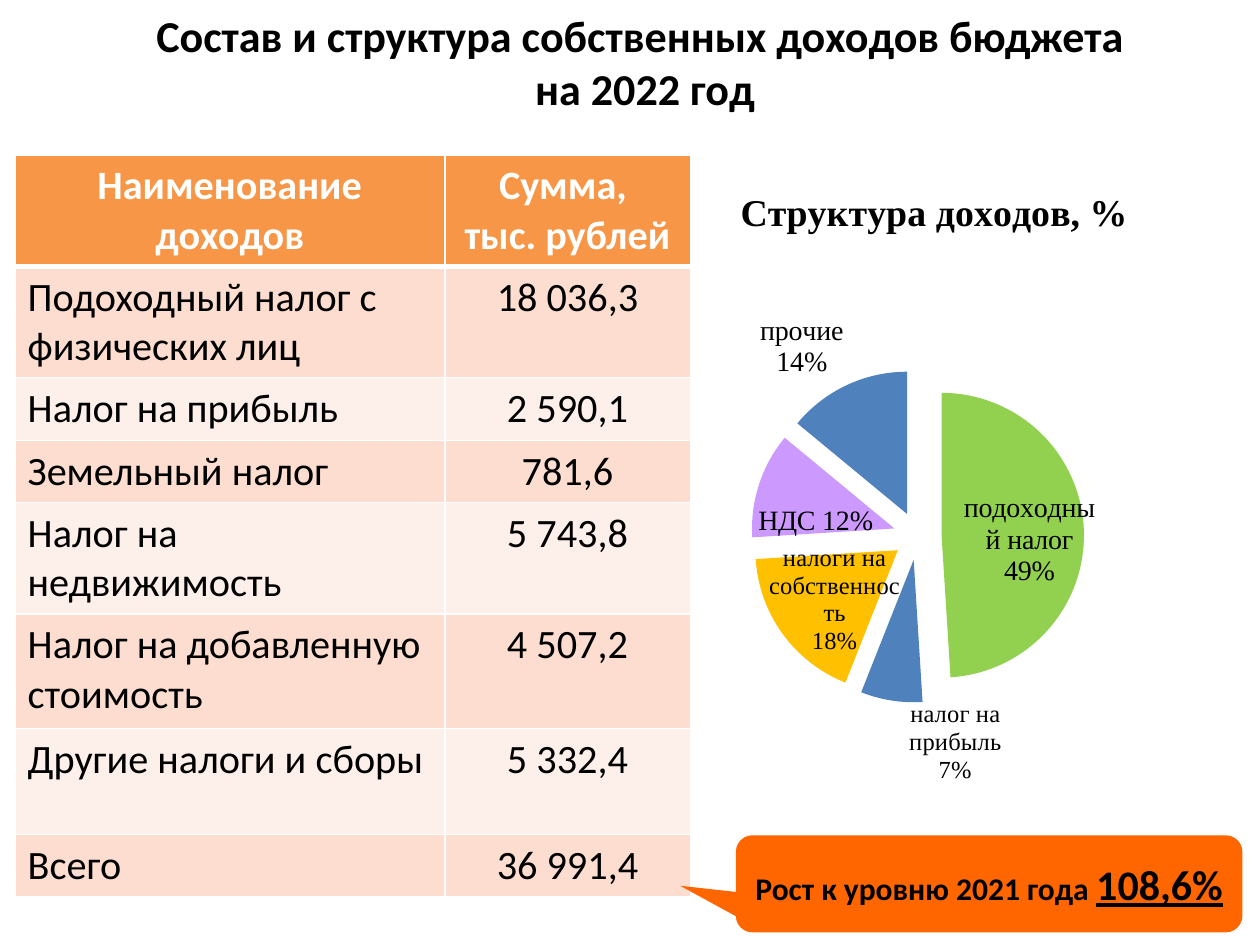
from pptx import Presentation, oxml
from pptx import util as u
from pptx.chart.data import CategoryChartData
from pptx.dml.color import RGBColor
from pptx.enum import chart as charts
from pptx.enum import shapes, text
from pptx.oxml.ns import nsdecls, qn

COLORS = {
    "black": "000000", "white": "FFFFFF", "header": "F79646",
    "odd": "FCDDCF", "even": "FDEFE9", "callout": "FF6600",
    "green": "92D050", "blue": "4F81BD", "yellow": "FFC000", "violet": "CC99FF",
}
ROWS = [
    ("Наименование доходов", "Сумма, \nтыс. рублей"),
    ("Подоходный налог с физических лиц", "18 036,3"),
    ("Налог на прибыль", "2 590,1"),
    ("Земельный налог", "781,6"),
    ("Налог на недвижимость", "5 743,8"),
    ("Налог на добавленную стоимость", "4 507,2"),
    ("Другие налоги и сборы", "5 332,4"),
    ("Всего", "36 991,4"),
]
INSIDE = charts.XL_LABEL_POSITION.CENTER
OUTSIDE = charts.XL_LABEL_POSITION.OUTSIDE_END
# name, percent, colour, label size, label place, label shift, separator
SLICES = [
    ("подоходный налог", 49, "green", 16, INSIDE, (0.03, 0.01), "\n"),
    ("налог на прибыль", 7, "blue", 14, OUTSIDE, (0.2, -0.01), "\n"),
    ("налоги на собственность", 18, "yellow", 14, INSIDE, (-0.01, 0.01), "\n"),
    ("НДС", 12, "violet", 16, INSIDE, (-0.02, 0.02), " "),
    ("прочие", 14, "blue", 16, OUTSIDE, (0, 0), "\n"),
]


def rgb(name):
    return RGBColor.from_string(COLORS[name])


def style_font(font, size, color="black", bold=False, name="Calibri", underline=None):
    font.size, font.bold, font.name, font.underline = u.Pt(size), bold, name, underline
    font.color.rgb = rgb(color)


def write(para, words, align=None, **style):
    """Add words to a paragraph; a newline becomes a line break."""
    para.alignment = align
    for number, line in enumerate(words.split("\n")):
        if number:
            para.add_line_break()
        span = para.add_run()
        span.text = line
        style_font(span.font, **style)


def place_part(parent, index, **shares):
    """Give a chart part a manual layout in shares of the chart."""
    old = parent.find(qn("c:layout"))
    if old is not None:
        parent.remove(old)
    inner = '<c:layoutTarget val="inner"/>' if "w" in shares else ""
    modes = "" if parent.tag == qn("c:dLbl") else '<c:xMode val="edge"/><c:yMode val="edge"/>'
    values = "".join(f'<c:{key} val="{value}"/>' for key, value in shares.items())
    parent.insert(index, oxml.parse_xml(
        f'<c:layout {nsdecls("c")}><c:manualLayout>{inner}{modes}{values}'
        "</c:manualLayout></c:layout>"))


class Slide:
    """A title-only page on a grid of 100 columns and 75 rows."""

    def __init__(self, deck):
        self.page = deck.slides.add_slide(deck.slide_layouts[5])
        self.column = deck.slide_width / 100
        self.row = deck.slide_height / 75

    def area(self, left, top, width, height):
        return (u.Emu(round(left * self.column)), u.Emu(round(top * self.row)),
                u.Emu(round(width * self.column)), u.Emu(round(height * self.row)))

    def title(self, words, *place):
        box = self.page.shapes.title
        box.left, box.top, box.width, box.height = self.area(*place)
        frame = box.text_frame
        frame.auto_size = text.MSO_AUTO_SIZE.NONE
        frame.vertical_anchor = text.MSO_ANCHOR.MIDDLE
        write(frame.paragraphs[0], words, text.PP_ALIGN.CENTER, size=25.2, bold=True)

    def table(self, rows, place, widths, heights):
        table = self.page.shapes.add_table(len(rows), len(widths), *self.area(*place)).table
        for column, width in zip(table.columns, widths):
            column.width = u.Emu(round(width * self.column))
        for number, (row, height) in enumerate(zip(table.rows, heights)):
            row.height = u.Emu(round(height * self.row))
            for cell, words in zip(row.cells, rows[number]):
                self.cell(cell, words, number, centred=number == 0 or words == rows[number][1])

    def cell(self, cell, words, number, centred):
        header = number == 0
        cell.fill.solid()
        cell.fill.fore_color.rgb = rgb("header" if header else "odd" if number % 2 else "even")
        for index, line in enumerate(words.split("\n")):
            frame = cell.text_frame
            para = frame.add_paragraph() if index else frame.paragraphs[0]
            write(para, line, text.PP_ALIGN.CENTER if centred else text.PP_ALIGN.LEFT,
                  size=23, bold=header, color="white" if header else "black")
        # White borders, thicker around the header's lower edge
        properties = cell._tc.get_or_add_tcPr()
        for index, side in enumerate("LRTB"):
            thick = (header and side == "B") or (number == 1 and side == "T")
            properties.insert(index, oxml.parse_xml(
                f'<a:ln{side} {nsdecls("a")} w="{u.Pt(3 if thick else 1)}"><a:solidFill>'
                f'<a:srgbClr val="{COLORS["white"]}"/></a:solidFill></a:ln{side}>'))

    def pie(self, title, slices, *place):
        data = CategoryChartData()
        data.categories = [item[0] for item in slices]
        data.add_series("Структура доходов", [item[1] for item in slices])
        chart = self.page.shapes.add_chart(
            charts.XL_CHART_TYPE.PIE, *self.area(*place), data).chart
        style_font(chart.font, 18)
        chart.has_legend = False
        chart.has_title = True
        write(chart.chart_title.text_frame.paragraphs[0], title,
              size=21.6, bold=True, name="Times New Roman")
        root = chart.element
        place_part(next(root.iter(qn("c:title"))), 1, x=0.15, y=0.05)
        place_part(next(root.iter(qn("c:plotArea"))), 0, x=0.18, y=0.31, w=0.6, h=0.46)

        plot = chart.plots[0]
        plot.vary_by_categories = False
        series = plot.series[0]
        for index, (_, _, color, size, position, _, _) in enumerate(slices):
            point = series.points[index]
            point.format.fill.solid()
            point.format.fill.fore_color.rgb = rgb(color)
            style_font(point.data_label.font, size, name="Times New Roman")
            point.data_label.position = position
        # Labels show name and percent
        for label, (*_, shift, separator) in zip(root.iter(qn("c:dLbl")), slices):
            for tag, shown in (("showVal", 0), ("showCatName", 1), ("showPercent", 1)):
                label.find(qn(f"c:{tag}")).set("val", str(shown))
            place_part(label, 1, x=shift[0], y=shift[1])
            label.append(oxml.parse_xml(
                f'<c:separator {nsdecls("c")}>{separator}</c:separator>'))
        next(root.iter(qn("c:dPt"))).addprevious(
            oxml.parse_xml(f'<c:explosion {nsdecls("c")} val="17"/>'))

    def callout(self, parts, adjustments, *place):
        box = self.page.shapes.add_shape(
            shapes.MSO_SHAPE.ROUNDED_RECTANGULAR_CALLOUT, *self.area(*place))
        for index, value in enumerate(adjustments):
            box.adjustments[index] = value
        box.shadow.inherit = False
        box.fill.solid()
        box.fill.fore_color.rgb = rgb("callout")
        box.line.fill.background()
        box.text_frame.word_wrap = True
        box.text_frame.vertical_anchor = text.MSO_ANCHOR.MIDDLE
        for words, style in parts:
            write(box.text_frame.paragraphs[0], words, text.PP_ALIGN.CENTER, bold=True, **style)


def main():
    deck = Presentation()
    deck.slide_width, deck.slide_height = u.Inches(10), u.Inches(7.5)
    slide = Slide(deck)
    slide.title("Состав и структура собственных доходов бюджета \nна 2022 год",
                2.2, 1.3, 98, 7.1)
    slide.table(ROWS, (1.2, 12.3, 53.5, 58.2), (34.1, 19.5),
                (8.4, 8.4, 5, 4.7, 8.4, 9.1, 8.4, 4.7))
    slide.pie("Структура доходов, %", SLICES, 51.6, 11.5, 44.2, 57.5)
    slide.callout([("Рост к уровню 2021 года ", {"size": 18}),
                   ("108,6%", {"size": 24, "underline": True})],
                  (-0.61, 0.02, 0.17), 58.4, 66.3, 40.2, 7.7)
    deck.save("out.pptx")


if __name__ == "__main__":
    main()
